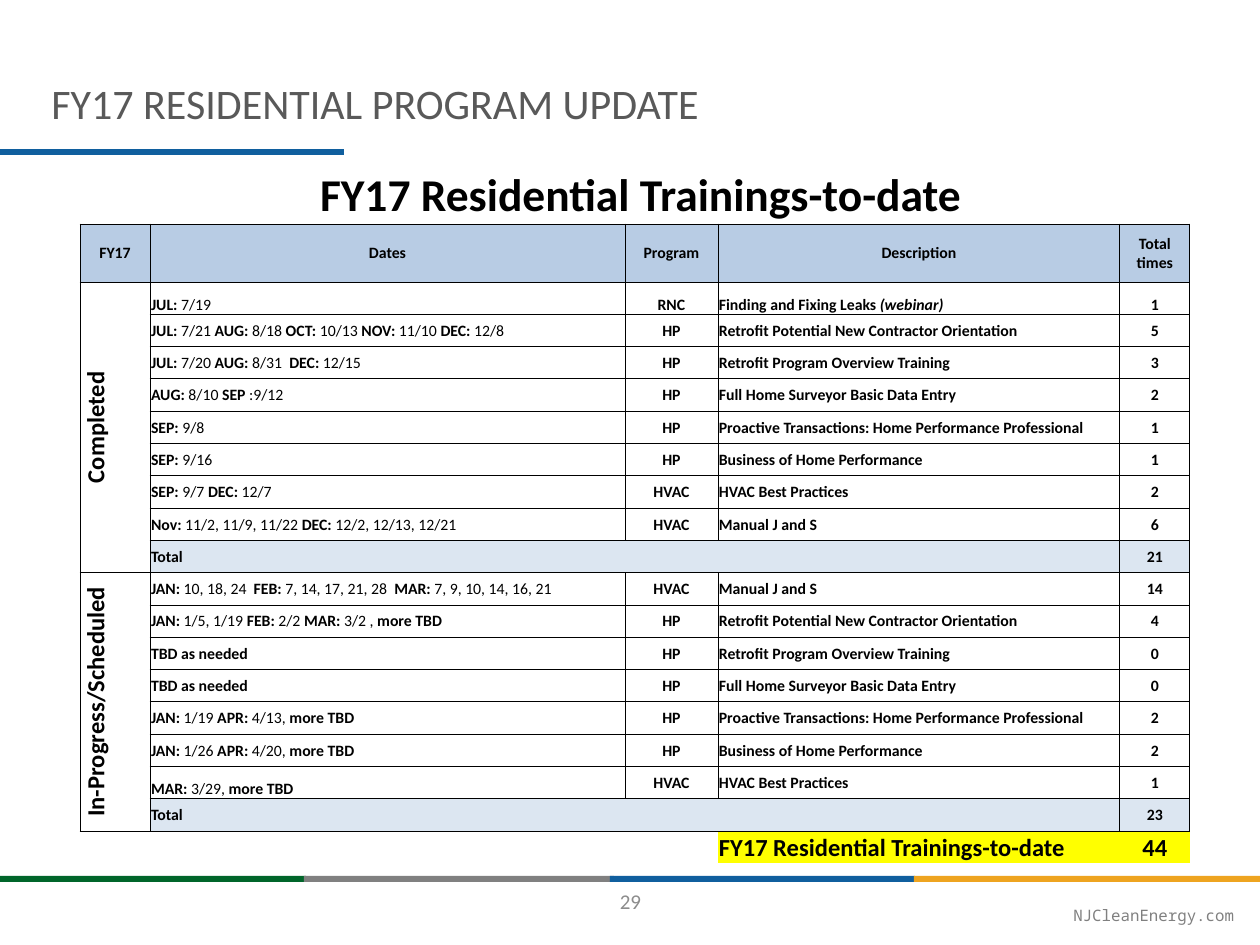
from lxml import etree
from pptx import Presentation
from pptx.dml.color import RGBColor
from pptx.enum.shapes import MSO_SHAPE
from pptx.enum.text import MSO_ANCHOR, PP_ALIGN
from pptx.oxml.ns import qn
from pptx.util import Emu, Pt

BLACK = RGBColor(0, 0, 0)
GREEN = RGBColor(0x00, 0x65, 0x2A)
GRAY = RGBColor(0x80, 0x80, 0x80)
BLUE = RGBColor(0x10, 0x5F, 0x9E)
ORANGE = RGBColor(0xEE, 0xA4, 0x20)
TITLE_GRAY = RGBColor(0x59, 0x59, 0x59)
NUMBER_GRAY = RGBColor(0x8C, 0x8C, 0x8C)
HEADER_BLUE = RGBColor(0xB8, 0xCC, 0xE4)
TOTAL_BLUE = RGBColor(0xDC, 0xE6, 0xF1)
YELLOW = RGBColor(0xFF, 0xFF, 0x00)

# Left, top, width, height in px
BARS = [
    (0, 876, 306, 6, GREEN),
    (304, 876, 310, 6, GRAY),
    (610, 876, 305, 6, BLUE),
    (914, 876, 346, 6, ORANGE),
    (0, 149, 344, 6, BLUE),
]

# Text, box, size, font, colour, bold, alignment, anchor
TEXTS = [
    ("FY17 Residential Trainings-to-date", (74, 160, 1134, 627), 26, "Calibri", BLACK, True,
     PP_ALIGN.CENTER, MSO_ANCHOR.TOP),
    ("FY17 RESIDENTIAL PROGRAM UPDATE", (39, 71, 803, 93), 24, "Calibri", TITLE_GRAY, False,
     PP_ALIGN.LEFT, MSO_ANCHOR.TOP),
    ("29", (489, 876, 283, 50), 12, "Calibri", NUMBER_GRAY, False,
     PP_ALIGN.CENTER, MSO_ANCHOR.MIDDLE),
]
SITE = "NJCleanEnergy.com"

HEADERS = {0: "FY17", 1: "Dates", 3: "Program", 4: "Description", 5: "Total times"}

# In dates, *...* is bold; in descriptions, *...* is italic
SECTIONS = [
    ("Completed", [
        ("*JUL: *7/19", "RNC", "Finding and Fixing Leaks *(webinar)*", 1),
        ("*JUL:* 7/21 *AUG:* 8/18 *OCT:* 10/13 *NOV:* 11/10 *DEC:* 12/8", "HP",
         "Retrofit Potential New Contractor Orientation", 5),
        ("*JUL: *7/20 *AUG:* 8/31  *DEC:* 12/15", "HP", "Retrofit Program Overview Training", 3),
        ("*AUG:* 8/10 *SEP* :9/12", "HP", "Full Home Surveyor Basic Data Entry", 2),
        ("*SEP:* 9/8", "HP", "Proactive Transactions: Home Performance Professional", 1),
        ("*SEP:* 9/16", "HP", "Business of Home Performance", 1),
        ("*SEP:* 9/7 *DEC:* 12/7", "HVAC", "HVAC Best Practices", 2),
        ("*Nov: *11/2, 11/9, 11/22 *DEC:* 12/2, 12/13, 12/21", "HVAC", "Manual J and S", 6),
    ]),
    ("In-Progress/Scheduled", [
        ("*JAN: *10, 18, 24  *FEB:* 7, 14, 17, 21, 28  *MAR:* 7, 9, 10, 14, 16, 21", "HVAC",
         "Manual J and S", 14),
        ("*JAN:* 1/5, 1/19 *FEB:* 2/2 *MAR:* 3/2 , *more TBD*", "HP",
         "Retrofit Potential New Contractor Orientation", 4),
        ("*TBD as needed*", "HP", "Retrofit Program Overview Training", 0),
        ("*TBD as needed*", "HP", "Full Home Surveyor Basic Data Entry", 0),
        ("*JAN: *1/19* APR: *4/13, *more TBD*", "HP",
         "Proactive Transactions: Home Performance Professional", 2),
        ("*JAN: *1/26* APR: *4/20, *more TBD*", "HP", "Business of Home Performance", 2),
        ("*MAR:* 3/29, *more TBD*", "HVAC", "HVAC Best Practices", 1),
    ]),
]
COL_WIDTHS = [70, 464, 11, 93, 402, 70]
TABLE_LEFT, TABLE_TOP, TABLE_HEIGHT, HEADER_HEIGHT = 80, 224, 640, 58
NO_STYLE = "{2D5ABB26-0587-4C30-8999-92F81FD0307C}"


def px(n):
    return Emu(round(n * 914400 / 126))


def style(r, size, color=BLACK, bold=True, font="Calibri"):
    r.font.size, r.font.name, r.font.bold = Pt(size), font, bold
    r.font.color.rgb = color


def add_text(s, text, box, size, font, color, bold, align, anchor):
    tf = s.shapes.add_textbox(*map(px, box)).text_frame
    tf.word_wrap, tf.vertical_anchor = True, anchor
    p = tf.paragraphs[0]
    p.text, p.alignment = text, align
    style(p.runs[0], size, color, bold, font)
    return tf


def fill_cell(cell, text, align=PP_ALIGN.CENTER, size=9, fill=None, dates=False,
              anchor=MSO_ANCHOR.MIDDLE):
    cell.vertical_anchor = anchor
    p = cell.text_frame.paragraphs[0]
    p.alignment = align
    for i, part in enumerate(str(text).split("*")):
        if part:
            r = p.add_run()
            r.text = part
            marked = i % 2 == 1
            style(r, size, bold=marked or not dates)
            r.font.italic = marked and not dates
    if fill is not None:
        cell.fill.solid()
        cell.fill.fore_color.rgb = fill


def add_borders(cell):
    tcPr = cell._tc.get_or_add_tcPr()
    for i, side in enumerate(("lnL", "lnR", "lnT", "lnB")):
        ln = etree.Element(qn("a:" + side), w=str(Pt(0.5)))
        solid = etree.SubElement(ln, qn("a:solidFill"))
        etree.SubElement(solid, qn("a:srgbClr"), val=str(BLACK))
        tcPr.insert(i, ln)


def add_trainings(s):
    n_rows = 2 + sum(len(rows) + 1 for _, rows in SECTIONS)
    frame = s.shapes.add_table(n_rows, len(COL_WIDTHS), px(TABLE_LEFT), px(TABLE_TOP),
                               px(sum(COL_WIDTHS)), px(TABLE_HEIGHT))
    t = frame.table
    t.first_row = t.horz_banding = False
    t._tbl.tblPr.find(qn("a:tableStyleId")).text = NO_STYLE
    for col, width in zip(t.columns, COL_WIDTHS):
        col.width = px(width)
    for i, row in enumerate(t.rows):
        row.height = px(HEADER_HEIGHT if i == 0 else (TABLE_HEIGHT - HEADER_HEIGHT) / (n_rows - 1))
    for cell in t.iter_cells():
        cell.margin_left = cell.margin_right = cell.margin_top = px(1)
        cell.margin_bottom = 0
        cell.fill.background()
    for i in range(n_rows):
        t.cell(i, 1 if i < n_rows - 1 else 2).merge(
            t.cell(i, 2 if i < n_rows - 1 else 3))

    # Header row
    for j, text in HEADERS.items():
        fill_cell(t.cell(0, j), text, fill=HEADER_BLUE)

    # Sections with their totals
    i = 1
    for name, rows in SECTIONS:
        label, end = t.cell(i, 0), i + len(rows)
        label.merge(t.cell(end, 0))
        fill_cell(label, name, size=14)
        label._tc.get_or_add_tcPr().set("vert", "vert270")
        for i, (dates, program, description, times) in enumerate(rows, i):
            low = MSO_ANCHOR.BOTTOM if i == 1 else MSO_ANCHOR.MIDDLE
            dates_anchor = MSO_ANCHOR.BOTTOM if dates.startswith("*MAR") else low
            fill_cell(t.cell(i, 1), dates, PP_ALIGN.LEFT, dates=True, anchor=dates_anchor)
            fill_cell(t.cell(i, 3), program, anchor=low)
            fill_cell(t.cell(i, 4), description, PP_ALIGN.LEFT, anchor=low)
            fill_cell(t.cell(i, 5), times, anchor=low)
        t.cell(end, 1).split()
        t.cell(end, 1).merge(t.cell(end, 4))
        fill_cell(t.cell(end, 1), "Total", PP_ALIGN.LEFT, fill=TOTAL_BLUE)
        fill_cell(t.cell(end, 5), sum(row[3] for row in rows), fill=TOTAL_BLUE)
        i = end + 1

    # Grand total
    total = sum(row[3] for _, rows in SECTIONS for row in rows)
    fill_cell(t.cell(i, 4), "FY17 Residential Trainings-to-date", PP_ALIGN.LEFT, 14, YELLOW)
    fill_cell(t.cell(i, 5), total, size=14, fill=YELLOW, anchor=MSO_ANCHOR.BOTTOM)

    # Borders, and a small size for empty cells so rows keep their height
    for n, cell in enumerate(t.iter_cells()):
        if n // len(COL_WIDTHS) < n_rows - 1:
            add_borders(cell)
        if not cell.text:
            etree.SubElement(cell.text_frame.paragraphs[0]._p, qn("a:endParaRPr"), sz="900")


def main():
    prs = Presentation()
    prs.slide_width, prs.slide_height = px(1260), px(945)
    s = prs.slides.add_slide(prs.slide_layouts[6])

    # Colour bars
    for *box, color in BARS:
        sp = s.shapes.add_shape(MSO_SHAPE.RECTANGLE, *map(px, box))
        sp.shadow.inherit = False
        sp.fill.solid()
        sp.fill.fore_color.rgb = color
        sp.line.fill.background()

    # Headings, page number and site address
    for text in TEXTS:
        add_text(s, *text)
    tf = add_text(s, SITE, (-26, 902, 1260, 21), 9, "Noto Sans Mono", GRAY, False,
                  PP_ALIGN.RIGHT, MSO_ANCHOR.TOP)
    tf.margin_left = tf.margin_right = tf.margin_top = tf.margin_bottom = 0
    tf.paragraphs[0].line_spacing = 1.2

    add_trainings(s)
    prs.save("out.pptx")


if __name__ == "__main__":
    main()
